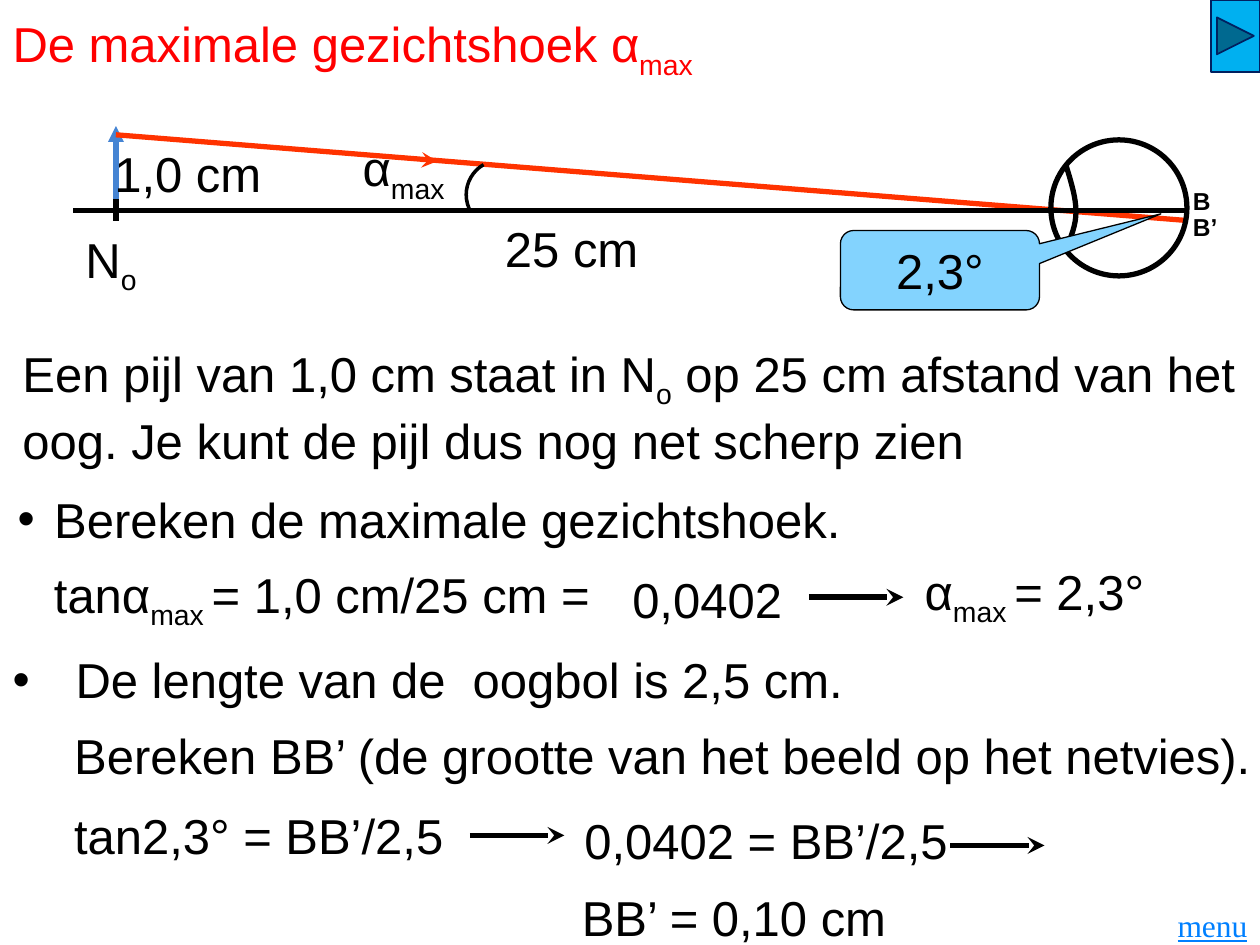
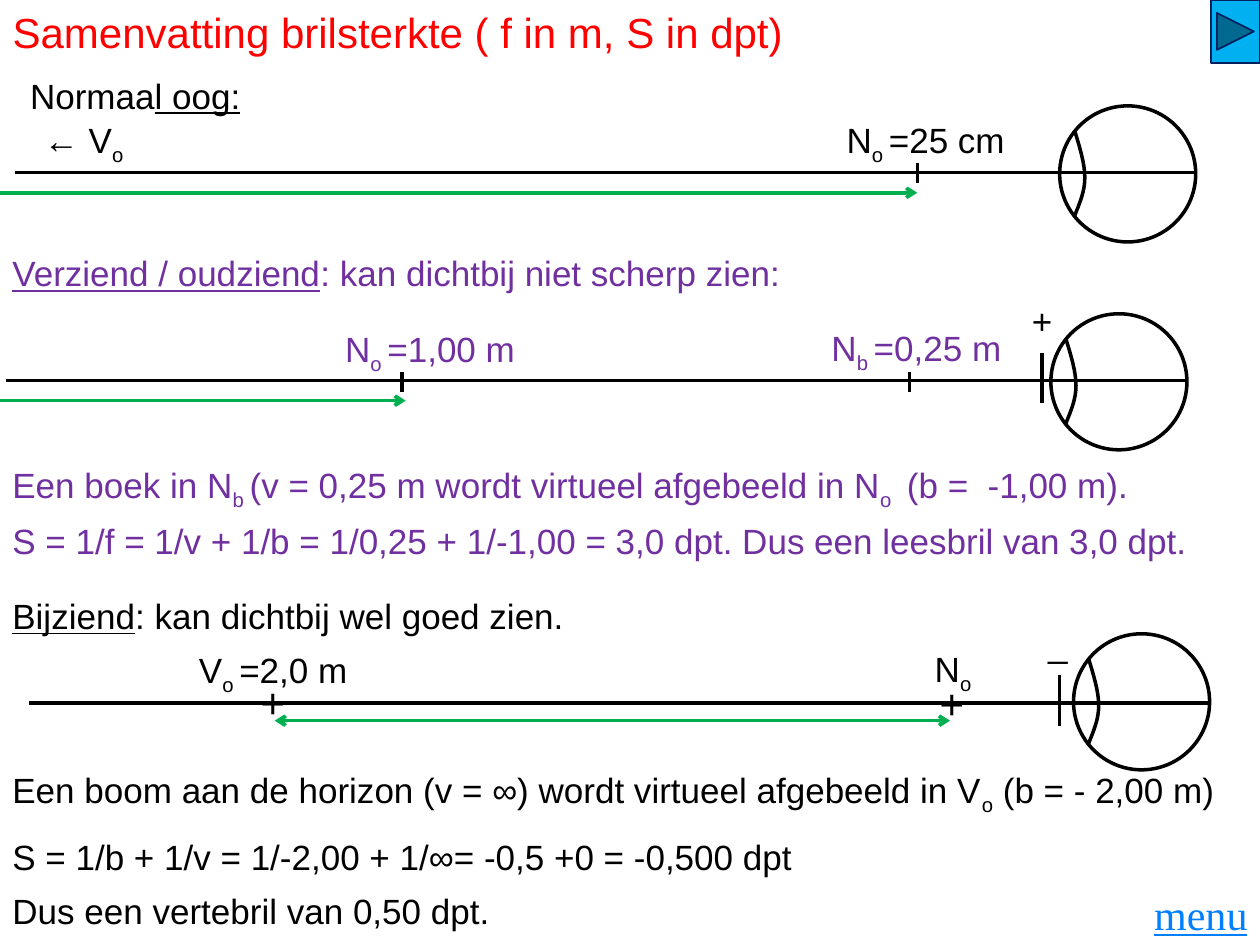
from dataclasses import dataclass

import lxml.etree
import pptx
import pptx.dml.color
import pptx.enum.shapes
import pptx.enum.text
import pptx.oxml.ns
import pptx.util

Inches = pptx.util.Inches
Pt = pptx.util.Pt
RGB = pptx.dml.color.RGBColor.from_string
SHAPE = pptx.enum.shapes.MSO_SHAPE
ALIGN = pptx.enum.text.PP_ALIGN
ANCHOR = pptx.enum.text.MSO_ANCHOR
qn = pptx.oxml.ns.qn


@dataclass(frozen=True)
class Theme:
    font: str = "Arial"
    menu_font: str = "Times New Roman"
    title: str = "FF0000"
    ink: str = "000000"
    farsighted: str = "7030A0"
    sharp_range: str = "00B050"
    ray: str = "FF3300"
    object_arrow: str = "4584D3"
    callout: str = "83D3FE"
    button: str = "00B0F0"
    button_line: str = "002060"
    menu: str = "0080FF"
    large: int = 28
    heading: int = 24
    body: int = 20
    small: int = 18
    label: int = 14


T = Theme()


def write(shape, runs, size, color=T.ink, anchor=ANCHOR.TOP, align=ALIGN.LEFT, font=T.font):
    """Fill a shape with one paragraph; each run is text or (text, "sub" | "u" | "b")."""
    tf = shape.text_frame
    tf.word_wrap = True
    tf.auto_size = pptx.enum.text.MSO_AUTO_SIZE.NONE
    tf.vertical_anchor = anchor
    p = tf.paragraphs[0]
    p.alignment = align
    p.space_before = Pt(0)
    for run in runs:
        text, style = (run, "") if isinstance(run, str) else run
        r = p.add_run()
        r.text = text
        r.font.name = font
        r.font.size = Pt(size)
        r.font.color.rgb = RGB(color)
        if style == "u":
            r.font.underline = True
        elif style == "b":
            r.font.bold = True
        elif style == "sub":
            r._r.get_or_add_rPr().set("baseline", "-25000")


def draw_line(s, x1, y1, x2, y2, color=T.ink, width=2, head=None, tail=None):
    c = s.shapes.add_connector(pptx.enum.shapes.MSO_CONNECTOR.STRAIGHT,
                               Inches(x1), Inches(y1), Inches(x2), Inches(y2))
    c.line.color.rgb = RGB(color)
    c.line.width = Pt(width)
    spPr = c._element.spPr
    ln = spPr.find(qn("a:ln"))
    for tag, kind in (("a:headEnd", head), ("a:tailEnd", tail)):
        if kind:
            lxml.etree.SubElement(ln, qn(tag), type=kind)
    lxml.etree.SubElement(spPr, qn("a:effectLst"))


prs = pptx.Presentation()
prs.slide_width = Inches(10)
prs.slide_height = Inches(7.5)
angle = prs.slides.add_slide(prs.slide_layouts[3])
summary = prs.slides.add_slide(prs.slide_layouts[5])

# Title, forward button and menu on both slides
frames = [
    (angle, ["De maximale gezichtshoek α", ("max", "sub")], T.large, 0.75,
     ANCHOR.MIDDLE, 0.57, 7.14, 0.36, T.small),
    (summary, ["Samenvatting brilsterkte ( f in m, S in dpt)"], T.heading, 0.5,
     ANCHOR.TOP, 0.5, 7, 0.5, T.heading),
]
for s, title, size, height, anchor, button_h, menu_y, menu_h, menu_size in frames:
    sp = s.shapes.title
    sp.left, sp.top, sp.width, sp.height = 0, 0, Inches(10), Inches(height)
    write(sp, title, size, T.title, anchor)
    sp = s.shapes.add_shape(SHAPE.ACTION_BUTTON_FORWARD_OR_NEXT,
                            Inches(9.61), 0, Inches(0.39), Inches(button_h))
    sp.shadow.inherit = False
    sp.fill.solid()
    sp.fill.fore_color.rgb = RGB(T.button)
    sp.line.color.rgb = RGB(T.button_line)
    sp.line.width = Pt(1)
    sp = s.shapes.add_textbox(Inches(9.06), Inches(menu_y), Inches(0.94), Inches(menu_h))
    write(sp, [("menu", "u")], menu_size, T.menu, align=ALIGN.RIGHT, font=T.menu_font)

# Object arrow and light ray
draw_line(angle, 0.92, 1.67, 0.92, 1, T.object_arrow, 3, tail="triangle")
draw_line(angle, 3.35, 1.27, 3.47, 1.28, T.ray, 3, tail="stealth")
draw_line(angle, 0.92, 1.07, 9.42, 1.75, T.ray, 3)

# Eyes: eyeball, optical axis and lens
eye_size = 1.08
lens_curves = [
    [(0, 0), (0.04, 0.13), (0.08, 0.26), (0.08, 0.37)],
    [(0.08, 0.37), (0.08, 0.48), (0.04, 0.57), (0, 0.67)],
]
steps = 8
eyes = [
    (angle, 8.34, 1.11, 0.58, 1.67, 3),
    (summary, 8.41, 0.84, 0.12, 1.37, 2),
    (summary, 8.34, 2.49, 0.05, 3.02, 2),
    (summary, 8.52, 5.03, 0.23, 5.58, 2),
]
for s, left, top, axis_start, axis_y, width in eyes:
    draw_line(s, axis_start, axis_y, left + eye_size, axis_y, width=width)
    ball = s.shapes.add_shape(SHAPE.OVAL, Inches(left), Inches(top),
                              Inches(eye_size), Inches(eye_size))
    points = []
    for curve in lens_curves:
        for i in range(steps + 1):
            t = i / steps
            weights = ((1 - t) ** 3, 3 * t * (1 - t) ** 2, 3 * t * t * (1 - t), t ** 3)
            x, y = (sum(w * pt[k] for w, pt in zip(weights, curve)) for k in (0, 1))
            points.append((Inches(left + 0.12 + x), Inches(top + 0.2 + y)))
    builder = s.shapes.build_freeform(*points[0])
    builder.add_line_segments(points[1:], close=False)
    for sp in (ball, builder.convert_to_shape()):
        sp.shadow.inherit = False
        sp.fill.background()
        sp.line.color.rgb = RGB(T.ink)
        sp.line.width = Pt(width)

# Slide 1: marks, angle arc and step arrows
draw_line(angle, 0.92, 1.58, 0.92, 1.75, width=3)
for x, y in [(7.54, 6.71), (3.73, 6.63), (6.42, 4.74)]:
    draw_line(angle, x, y, x + 0.75, y, width=3.25, tail="stealth")

arc = angle.shapes.add_shape(SHAPE.ARC, Inches(3.7), Inches(1.27), Inches(0.55), Inches(0.55))
arc.rotation = 240
arc.shadow.inherit = False
arc.fill.background()
arc.line.color.rgb = RGB(T.ink)
arc.line.width = Pt(2)

callout = angle.shapes.add_shape(SHAPE.ROUNDED_RECTANGULAR_CALLOUT,
                                 Inches(6.67), Inches(1.83), Inches(1.58), Inches(0.63))
callout.adjustments[0] = 1.11
callout.adjustments[1] = -0.71
callout.shadow.inherit = False
callout.fill.solid()
callout.fill.fore_color.rgb = RGB(T.callout)
callout.line.color.rgb = RGB(T.ink)
callout.line.width = Pt(0.75)
write(callout, ["2,3°"], T.large, anchor=ANCHOR.MIDDLE, align=ALIGN.CENTER)

# Slide 1: bulleted questions
questions = [
    (1, 0.04, 3.7, 9.92, 0.83, 0.29, "Bereken de maximale gezichtshoek."),
    (2, 0, 5.01, 8.12, 0.76, 0.5, "De lengte van de  oogbol is 2,5 cm."),
]
for idx, x, y, w, h, indent, text in questions:
    sp = angle.placeholders[idx]
    sp.left, sp.top, sp.width, sp.height = Inches(x), Inches(y), Inches(w), Inches(h)
    pPr = sp.text_frame.paragraphs[0]._p.get_or_add_pPr()
    pPr.set("marL", str(Inches(indent)))
    pPr.set("indent", str(-Inches(indent)))
    write(sp, [text], T.large, anchor=ANCHOR.MIDDLE)

# Slide 1: labels and calculation
angle_texts = [
    (0.58, 1.42, 1.42, 1.33, ["N", ("o", "sub")]),
    (3.91, 1.55, 1.37, 0.83, ["25 cm"]),
    (0.81, 0.96, 2.74, 0.83, ["1,0 cm"]),
    (2.78, 0.9, 1.28, 0.92, ["α", ("max", "sub")]),
    (0.08, 2.81, 9.92, 0.83,
     ["Een pijl van 1,0 cm staat in N", ("o", "sub"),
      " op 25 cm afstand van het oog. Je kunt de pijl dus nog net scherp zien"]),
    (0.33, 4.33, 6.39, 0.83, ["tanα", ("max ", "sub"), "= 1,0 cm/25 cm ="]),
    (4.92, 4.34, 1.66, 0.83, ["0,0402"]),
    (7.24, 4.31, 2.09, 0.82, ["α", ("max ", "sub"), "= 2,3°"]),
    (0.49, 5.58, 9.92, 0.83, ["Bereken BB’ (de grootte van het beeld op het netvies)."]),
    (0.49, 5.96, 3.5, 1.33, ["tan2,3° = BB’/2,5"]),
    (4.54, 6, 3.52, 1.33, ["0,0402 = BB’/2,5"]),
    (4.52, 6.61, 2.96, 1.33, ["BB’ = 0,10 cm"]),
]
for x, y, w, h, runs in angle_texts:
    sp = angle.shapes.add_textbox(Inches(x), Inches(y), Inches(w), Inches(h))
    write(sp, runs, T.large, anchor=ANCHOR.MIDDLE)
for y, text in [(1.43, "B"), (1.63, "B’")]:
    sp = angle.shapes.add_textbox(Inches(9.37), Inches(y), Inches(0.4), Inches(0.34))
    write(sp, [(text, "b")], T.label)
    sp.text_frame.word_wrap = False

# Slide 2: near-point marks, glasses and ranges of sharp sight
for x, y, length in [(7.28, 1.29, 0.16), (7.22, 2.95, 0.16), (3.19, 2.95, 0.16),
                     (8.27, 2.8, 0.4), (8.41, 5.36, 0.4)]:
    draw_line(summary, x, y, x, y + length)
for x1, x2, y, head in [(0, 7.28, 1.53, None), (0, 3.22, 3.18, None),
                        (2.18, 7.54, 5.72, "arrow")]:
    draw_line(summary, x1, y, x2, y, T.sharp_range, head=head, tail="arrow")

# Slide 2: text
summary_texts = [
    (0.14, 0.54, 2.63, T.ink, ["Normaa", ("l oog:", "u")]),
    (0.25, 0.89, 0.92, T.ink, ["← V", ("o", "sub")]),
    (6.62, 0.89, 1.65, T.ink, ["N", ("o ", "sub"), "=25 cm"]),
    (0, 1.95, 10, T.farsighted,
     [("Verziend / oudziend", "u"), ": kan dichtbij niet scherp zien:"]),
    (2.64, 2.55, 1.65, T.farsighted, ["N", ("o ", "sub"), "=1,00 m"]),
    (6.5, 2.54, 1.65, T.farsighted, ["N", ("b ", "sub"), "=0,25 m"]),
    (8.09, 2.33, 0.55, T.ink, ["+"]),
    (0, 3.63, 10, T.farsighted,
     ["Een boek in N", ("b ", "sub"), "(v = 0,25 m wordt virtueel afgebeeld in N",
      ("o ", "sub"), " (b =  -1,00 m)."]),
    (0, 4.07, 9.92, T.farsighted,
     ["S = 1/f = 1/v + 1/b = 1/0,25 + 1/-1,00 = 3,0 dpt. Dus een leesbril van 3,0 dpt."]),
    (0, 4.67, 9.96, T.ink, [("Bijziend", "u"), ": kan dichtbij wel goed zien."]),
    (1.48, 5.1, 1.65, T.ink, ["V", ("o ", "sub"), "=2,0 m"]),
    (7.32, 5.09, 1.65, T.ink, ["N", ("o", "sub")]),
    (8.22, 4.89, 0.55, T.ink, ["_"]),
    (0, 6.05, 10, T.ink,
     ["Een boom aan de horizon (v = ∞) wordt virtueel afgebeeld in V", ("o", "sub"),
      " (b = - 2,00 m)"]),
    (0, 6.58, 10, T.ink, ["S = 1/b + 1/v = 1/-2,00 + 1/∞= -0,5 +0 = -0,500 dpt"]),
    (0, 7.01, 4.13, T.ink, ["Dus een vertebril van 0,50 dpt."]),
]
for x, y, w, color, runs in summary_texts:
    sp = summary.shapes.add_textbox(Inches(x), Inches(y), Inches(w), Inches(0.44))
    write(sp, runs, T.body, color)
for x, y in [(1.97, 5.32), (7.36, 5.33)]:
    sp = summary.shapes.add_textbox(Inches(x), Inches(y), Inches(0.59), Inches(0.5))
    write(sp, ["+"], T.heading)

prs.save("out.pptx")
